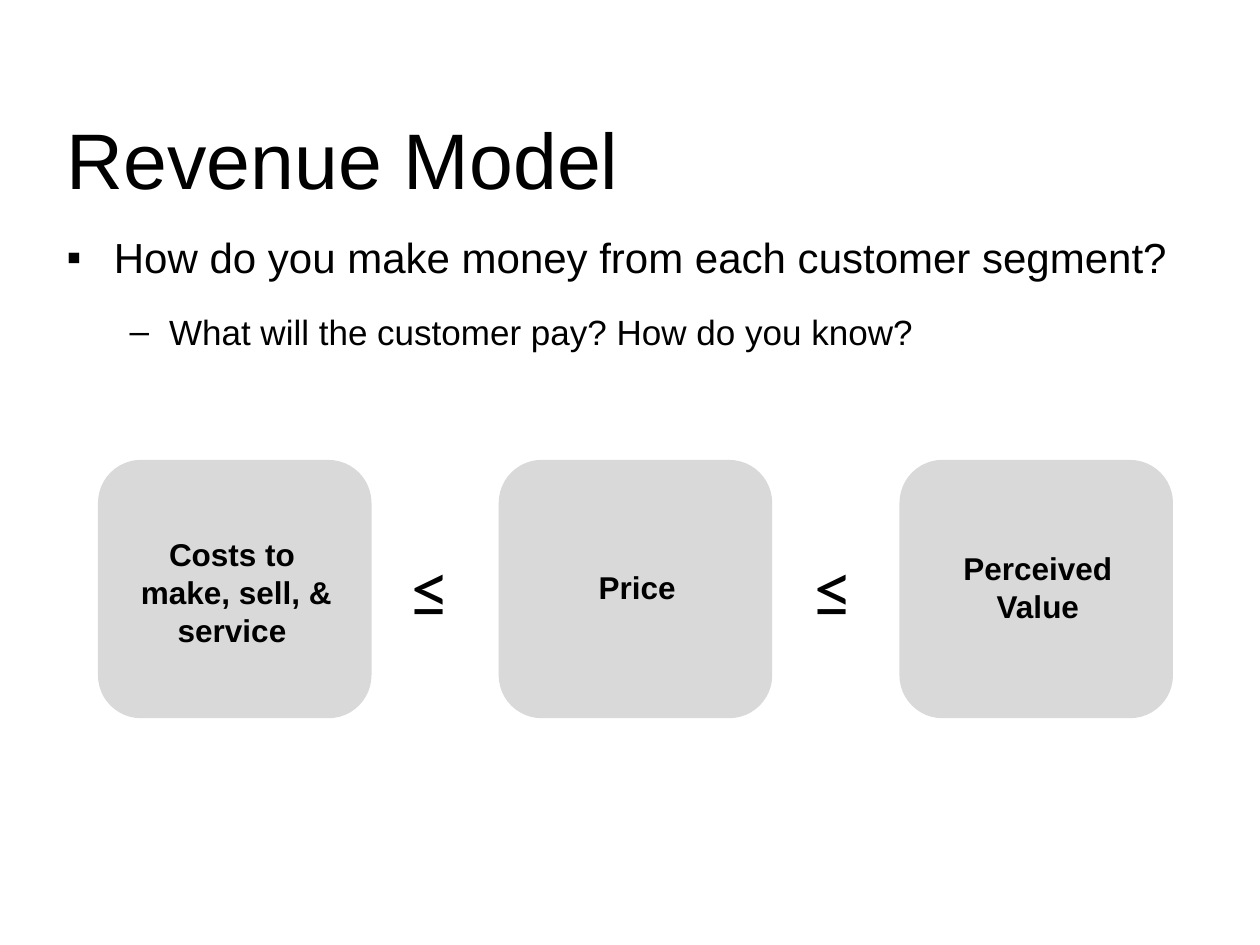
from lxml import etree
from pptx import Presentation
from pptx.dml.color import RGBColor
from pptx.enum import shapes, text
from pptx.oxml.ns import qn
from pptx.util import Pt

BLACK = "000000"
GREY = "D9D9D9"

CARD_LEFT, CARD_TOP = 56, 262.8
CARD_WIDTH, CARD_HEIGHT = 156.3, 147.6
CARD_STEP = 229
LABEL_INSET = 4.6
SIGN_LEFT, SIGN_STEP = 228.2, 230.4

# Lines, top and height of each label
CARDS = [
    (["Costs to ", "make, sell, & service "], 302.4, 72.7),
    (["Price"], 321.1, 28.8),
    (["Perceived Value"], 310.3, 51.1),
]


def colour(value):
    return RGBColor.from_string(value)


def place(shape, left, top, width, height):
    shape.left, shape.top = Pt(left), Pt(top)
    shape.width, shape.height = Pt(width), Pt(height)


def add_span(para, words, size, font="Arial", bold=False):
    span = para.add_run()
    span.text = words
    span.font.name = font
    span.font.size = Pt(size)
    span.font.bold = bold
    span.font.color.rgb = colour(BLACK)


def add_text_box(page, left, top, width, height):
    box = page.shapes.add_textbox(Pt(left), Pt(top), Pt(width), Pt(height))
    box.text_frame.word_wrap = True
    return box.text_frame


def set_bullet(para, mark, margin, hanging):
    properties = para._p.get_or_add_pPr()
    properties.set("marL", str(Pt(margin)))
    properties.set("indent", str(-Pt(hanging)))
    etree.SubElement(properties, qn("a:buFont")).set("typeface", "Arial")
    etree.SubElement(properties, qn("a:buChar")).set("char", mark)


def add_title(page, words):
    title = page.shapes.title
    place(title, 31, 53.3, 653, 67.7)
    frame = title.text_frame
    frame.word_wrap = True
    frame.auto_size = text.MSO_AUTO_SIZE.NONE
    frame.vertical_anchor = text.MSO_ANCHOR.BOTTOM
    para = frame.paragraphs[0]
    para.alignment = text.PP_ALIGN.LEFT
    para.line_spacing = Pt(45)
    add_span(para, words, 45)


def add_questions(page):
    frame = add_text_box(page, 31, 128.9, 653, 344.9)
    question = frame.paragraphs[0]
    set_bullet(question, "▪", 27, 27)
    add_span(question, "How do you make money from each customer segment?", 24)

    detail = frame.add_paragraph()
    detail.level = 1
    set_bullet(detail, "–", 58.5, 22.5)
    detail.line_spacing = 1.5
    detail.space_before = Pt(4)
    add_span(detail, "What will the customer pay? How do you know?", 20)


def add_card(page, left, lines, label_top, label_height):
    card = page.shapes.add_shape(
        shapes.MSO_SHAPE.ROUNDED_RECTANGLE,
        Pt(left), Pt(CARD_TOP), Pt(CARD_WIDTH), Pt(CARD_HEIGHT))
    card.shadow.inherit = False
    card.fill.solid()
    card.fill.fore_color.rgb = colour(GREY)
    card.line.fill.background()

    frame = add_text_box(page, left + LABEL_INSET, label_top, 149, label_height)
    for index, line in enumerate(lines):
        para = frame.add_paragraph() if index else frame.paragraphs[0]
        para.alignment = text.PP_ALIGN.CENTER
        add_span(para, line, 18, bold=True)


def add_sign(page, left):
    frame = add_text_box(page, left, 305.3, 55.4, 92.2)
    add_span(frame.paragraphs[0], "≤", 44, font="Calibri")


def main():
    deck = Presentation()
    deck.slide_width, deck.slide_height = Pt(720), Pt(540)
    page = deck.slides.add_slide(deck.slide_layouts[5])
    add_title(page, "Revenue Model")
    add_questions(page)
    for index in range(len(CARDS) - 1):
        add_sign(page, SIGN_LEFT + index * SIGN_STEP)
    for index, (lines, top, height) in enumerate(CARDS):
        add_card(page, CARD_LEFT + index * CARD_STEP, lines, top, height)
    deck.save("out.pptx")


if __name__ == "__main__":
    main()
